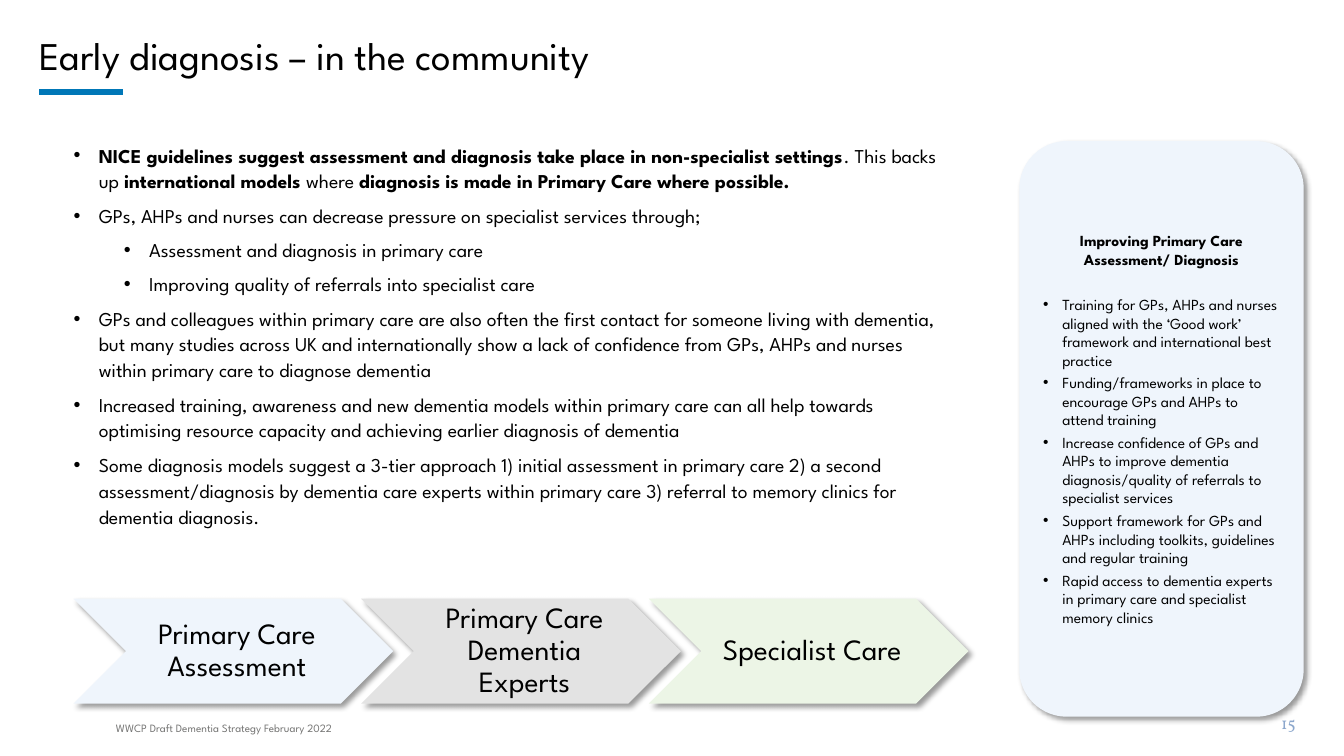
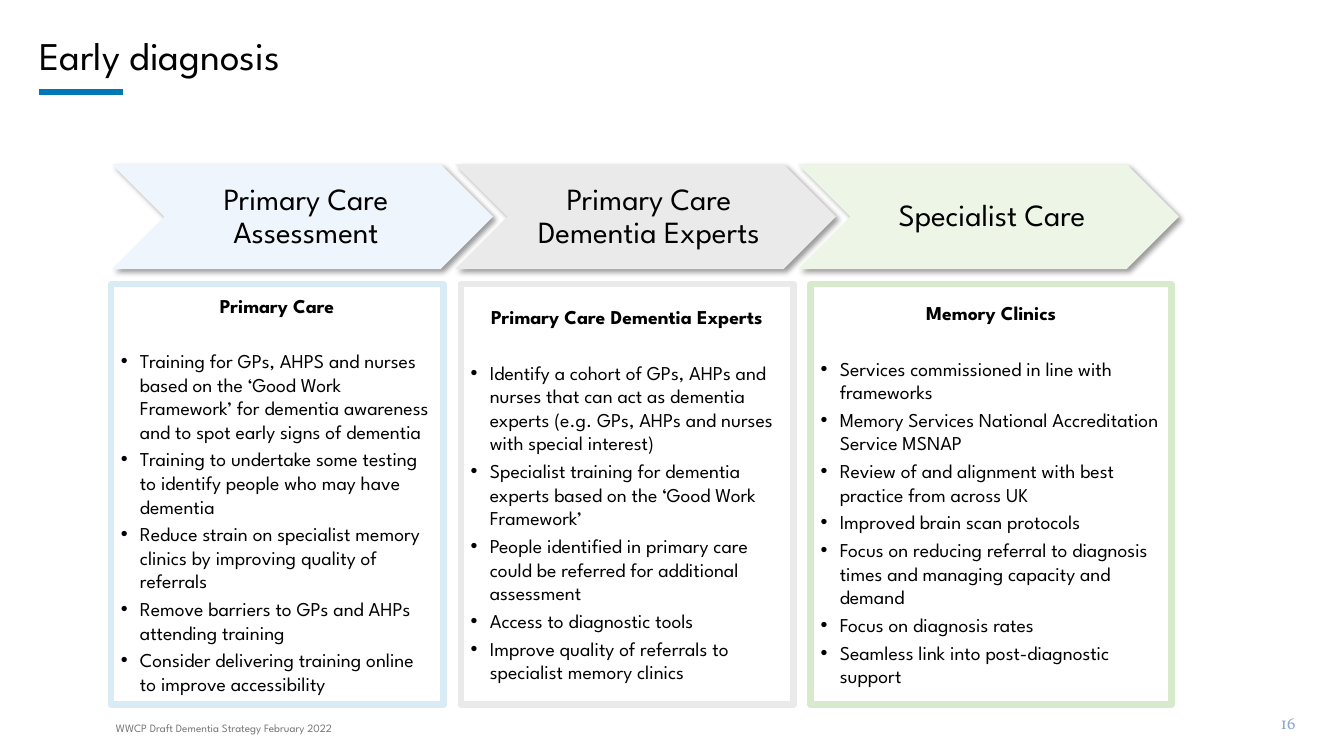
from dataclasses import dataclass

from lxml import etree
from pptx import Presentation
from pptx.dml.color import RGBColor
from pptx.enum.shapes import MSO_CONNECTOR, MSO_SHAPE
from pptx.enum.text import MSO_ANCHOR, MSO_AUTO_SIZE, PP_ALIGN
from pptx.oxml import parse_xml
from pptx.oxml.ns import nsdecls, qn
from pptx.util import Inches, Pt

CHEVRON, RECTANGLE, ROUNDED = MSO_SHAPE.CHEVRON, MSO_SHAPE.RECTANGLE, MSO_SHAPE.ROUNDED_RECTANGLE
LEFT, CENTER, RIGHT = PP_ALIGN.LEFT, PP_ALIGN.CENTER, PP_ALIGN.RIGHT
TOP, MIDDLE, BOTTOM = MSO_ANCHOR.TOP, MSO_ANCHOR.MIDDLE, MSO_ANCHOR.BOTTOM
TITLE_ONLY = 5


@dataclass(frozen=True)
class Theme:
    font: str = "League Spartan"
    number_font: str = "Vollkorn"
    text: str = "000000"
    accent: str = "0077B7"
    footer: str = "757574"
    number: str = "8CA7CC"
    blue: str = "EFF5FC"
    grey: str = "E3E3E3"
    light_grey: str = "EAEAEA"
    green: str = "ECF5E6"
    blue_border: str = "D9EBF4"
    green_border: str = "D8EACC"
    title_size: int = 28
    body_size: int = 14
    sidebar_size: int = 11
    footer_size: int = 8
    number_size: int = 12
    rule_width: float = 4.5


THEME = Theme()
FOOTER = "WWCP Draft Dementia Strategy February 2022"
STAGES = ["Primary Care Assessment", "Primary Care Dementia Experts", "Specialist Care"]

# Each item: level, then runs of (text, bold)
COMMUNITY_POINTS = [
    (0, [("NICE guidelines suggest assessment and diagnosis take place in non-specialist settings", True),
         (". This backs up ", False), ("international models ", True), ("where ", False),
         ("diagnosis is made in Primary Care where possible.", True)]),
    (0, [("GPs, AHPs and nurses can decrease pressure on specialist services through;", False)]),
    (1, [("Assessment and diagnosis in primary care", False)]),
    (1, [("Improving quality of referrals into specialist care", False)]),
    (0, [("GPs and colleagues within primary care are also often the first contact for someone living "
          "with dementia, but many studies across UK and internationally show a lack of confidence from "
          "GPs, AHPs and nurses within primary care to diagnose dementia", False)]),
    (0, [("Increased training, awareness and new dementia models within primary care can all help "
          "towards optimising resource capacity and achieving earlier diagnosis of dementia", False)]),
    (0, [("Some diagnosis models suggest a 3-tier approach 1) initial assessment in primary care "
          "2) a second assessment/diagnosis by dementia care experts within primary care 3) referral "
          "to memory clinics for dementia diagnosis.", False)]),
]

SIDEBAR = ("Improving Primary Care Assessment/ Diagnosis", [
    "Training for GPs, AHPs and nurses aligned with the ‘Good work’ framework and international best practice",
    "Funding/frameworks in place to encourage GPs and AHPs to attend training",
    "Increase confidence of GPs and AHPs to improve dementia diagnosis/quality of referrals to specialist services",
    "Support framework for GPs and AHPs including toolkits, guidelines and regular training",
    "Rapid access to dementia experts in primary care and specialist memory clinics",
])

# Each panel: heading, width, border colour, points
PANELS = [
    ("Primary Care", 3.3, THEME.blue_border, [
        "Training for GPs, AHPS and nurses based on the ‘Good Work Framework’ for dementia awareness "
        "and to spot early signs of dementia",
        "Training to undertake some testing to identify people who may have dementia",
        "Reduce strain on specialist memory clinics by improving quality of referrals",
        "Remove barriers to GPs and AHPs attending training",
        "Consider delivering training online to improve accessibility",
    ]),
    ("Primary Care Dementia Experts", 3.3, THEME.light_grey, [
        "Identify a cohort of GPs, AHPs and nurses that can act as dementia experts "
        "(e.g. GPs, AHPs and nurses with special interest)",
        "Specialist training for dementia experts based on the ‘Good Work Framework’",
        "People identified in primary care could be referred for additional assessment",
        "Access to diagnostic tools",
        "Improve quality of referrals to specialist memory clinics",
    ]),
    ("Memory Clinics", 3.58, THEME.green_border, [
        "Services commissioned in line with frameworks",
        "Memory Services National Accreditation Service MSNAP",
        "Review of and alignment with best practice from across UK",
        "Improved brain scan protocols",
        "Focus on reducing referral to diagnosis times and managing capacity and demand",
        "Focus on diagnosis rates",
        "Seamless link into post-diagnostic support",
    ]),
]


def color(value):
    return RGBColor.from_string(value)


def prepare_frame(shape, anchor=TOP, insets=(0, 0, 0, 0)):
    frame = shape.text_frame
    frame.word_wrap = True
    frame.auto_size = MSO_AUTO_SIZE.NONE
    frame.vertical_anchor = anchor
    frame.margin_left, frame.margin_top, frame.margin_right, frame.margin_bottom = map(Inches, insets)
    return frame


def write(frame, text, size=THEME.body_size, bold=False, font=THEME.font, fill=THEME.text,
          align=LEFT, spacing=1.0, before=0, bullet_indent=0, hang=0, level=0):
    """Write one paragraph; text is a string or a list of (text, bold) runs."""
    first = not frame.paragraphs[0].runs
    paragraph = frame.paragraphs[0] if first else frame.add_paragraph()
    paragraph.alignment = align
    paragraph.line_spacing = spacing
    paragraph.space_before = Pt(0 if first else before)
    paragraph.level = level
    if hang:
        properties = paragraph._p.get_or_add_pPr()
        properties.set("marL", str(Inches(bullet_indent)))
        properties.set("indent", str(-Inches(hang)))
        etree.SubElement(properties, qn("a:buFont")).set("typeface", "Arial")
        etree.SubElement(properties, qn("a:buChar")).set("char", "•")
    for run_text, run_bold in [(text, bold)] if isinstance(text, str) else text:
        run = paragraph.add_run()
        run.text = run_text
        run.font.name = font
        run.font.size = Pt(size)
        run.font.bold = run_bold
        run.font.color.rgb = color(fill)


def add_text_box(slide, box, text, anchor=TOP, insets=(0, 0, 0, 0), **text_format):
    shape = slide.shapes.add_textbox(*map(Inches, box))
    write(prepare_frame(shape, anchor, insets), text, **text_format)


def add_block(slide, kind, box, fill=None, border=None):
    """Add a preset shape: filled with a soft shadow, or outlined only."""
    shape = slide.shapes.add_shape(kind, *map(Inches, box))
    shape.shadow.inherit = False
    if border:
        shape.fill.background()
        shape.line.color.rgb = color(border)
        shape.line.width = Pt(THEME.rule_width)
    else:
        shape.fill.solid()
        shape.fill.fore_color.rgb = color(fill)
        shape.line.fill.background()
        shape._element.spPr.find(qn("a:effectLst")).append(parse_xml(
            f'<a:outerShdw {nsdecls("a")} blurRad="{Pt(4)}" dist="{Pt(3)}" dir="2700000" '
            'algn="tl" rotWithShape="0"><a:srgbClr val="000000"><a:alpha val="40000"/>'
            '</a:srgbClr></a:outerShdw>'))
    return shape


def write_panel(shape, heading, points, size):
    frame = prepare_frame(shape, MIDDLE, (0.1, 0.05, 0.1, 0.05))
    write(frame, heading, size=size, bold=True, align=CENTER)
    heading_gap = 6 + 1.2 * size
    for index, point in enumerate(points):
        write(frame, point, size=size, before=3 if index else heading_gap,
              bullet_indent=0.19, hang=0.19)


def add_stages(slide, left, top, width, size, fills):
    """Draw the row of chevrons, each overlapping the one before by a tenth."""
    for index, (stage, fill) in enumerate(zip(STAGES, fills)):
        chevron = add_block(slide, CHEVRON, (left + index * 0.9 * width, top, width, 1.04), fill)
        frame = prepare_frame(chevron, MIDDLE, (0.1, 0.03, 0.03, 0.03))
        write(frame, stage, size=size, align=CENTER, spacing=0.9)


def add_base_slide(presentation, title, number):
    slide = presentation.slides.add_slide(presentation.slide_layouts[TITLE_ONLY])
    heading = slide.shapes.title
    heading.left, heading.top, heading.width, heading.height = map(Inches, (0.39, 0.39, 10.96, 0.39))
    write(prepare_frame(heading, BOTTOM), title, size=THEME.title_size, spacing=0.9)

    rule = slide.shapes.add_connector(
        MSO_CONNECTOR.STRAIGHT, *map(Inches, (0.39, 0.91, 1.22, 0.91)))
    rule.line.color.rgb = color(THEME.accent)
    rule.line.width = Pt(THEME.rule_width)
    etree.SubElement(rule._element.spPr, qn("a:effectLst"))

    add_text_box(slide, (1.15, 7.16, 2.51, 0.21), FOOTER, size=THEME.footer_size, fill=THEME.footer)
    add_text_box(slide, (9.95, 6.97, 3, 0.4), str(number), MIDDLE, (0.1, 0.05, 0.1, 0.05),
                 size=THEME.number_size, font=THEME.number_font, fill=THEME.number, align=RIGHT)
    return slide


def build_community_slide(presentation):
    slide = add_base_slide(presentation, "Early diagnosis – in the community", 15)
    body = prepare_frame(slide.shapes.add_textbox(*map(Inches, (0.73, 1.4, 8.74, 4.4))))
    for level, runs in COMMUNITY_POINTS:
        write(body, runs, spacing=1.1, before=6, level=level,
              bullet_indent=0.25 + 0.5 * level, hang=0.25)
    sidebar = add_block(slide, ROUNDED, (10.11, 1.4, 2.82, 5.71), THEME.blue)
    write_panel(sidebar, *SIDEBAR, size=THEME.sidebar_size)
    add_stages(slide, 0.73, 5.94, 3.17, 21, (THEME.blue, THEME.grey, THEME.green))


def build_stages_slide(presentation):
    slide = add_base_slide(presentation, "Early diagnosis", 16)
    add_stages(slide, 1.11, 1.63, 3.78, 22, (THEME.blue, THEME.light_grey, THEME.green))
    left, gap = 1.1, 0.17
    for heading, width, border, points in PANELS:
        panel = add_block(slide, RECTANGLE, (left, 2.82, width, 4.17), border=border)
        write_panel(panel, heading, points, THEME.body_size)
        left += width + gap


def main():
    presentation = Presentation()
    presentation.slide_width, presentation.slide_height = Inches(13.33), Inches(7.5)
    build_community_slide(presentation)
    build_stages_slide(presentation)
    presentation.save("out.pptx")


if __name__ == "__main__":
    main()
